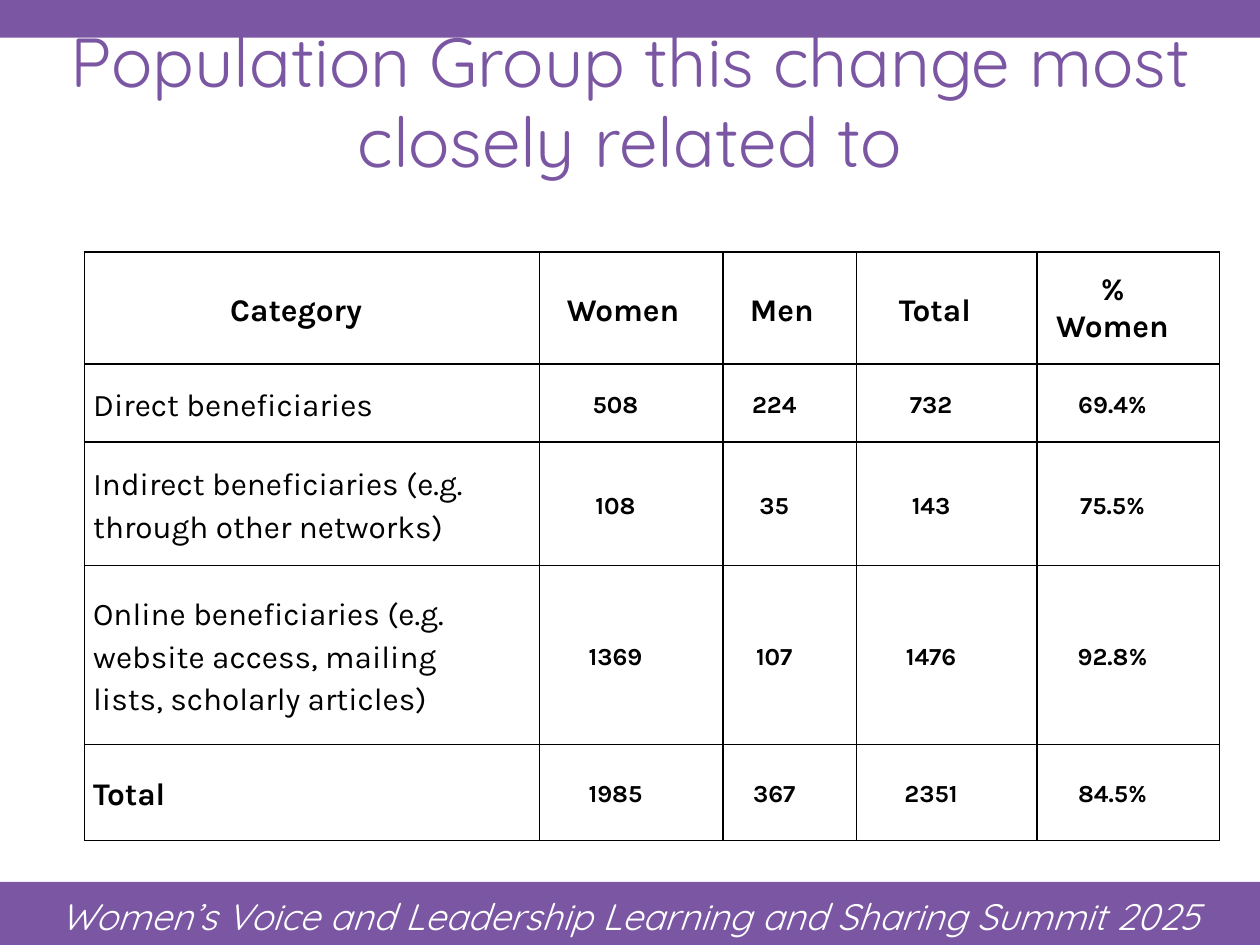
from lxml import etree
from pptx import Presentation
from pptx.dml.color import RGBColor
from pptx.enum.shapes import MSO_SHAPE
from pptx.enum.text import MSO_ANCHOR, MSO_AUTO_SIZE, PP_ALIGN
from pptx.oxml.ns import qn
from pptx.util import Inches, Pt

RECT = MSO_SHAPE.RECTANGLE
MIDDLE = MSO_ANCHOR.MIDDLE
LEFT, CENTER = PP_ALIGN.LEFT, PP_ALIGN.CENTER
NO_FIT = MSO_AUTO_SIZE.NONE

TABLE_ROWS = [
    ["Category", "Women", "Men", "Total", "%\nWomen"],
    ["Direct beneficiaries", "508", "224", "732", "69.4%"],
    ["Indirect beneficiaries (e.g. through other networks)", "108", "35", "143", "75.5%"],
    ["Online beneficiaries (e.g. website access, mailing lists, scholarly articles)",
     "1369", "107", "1476", "92.8%"],
    ["Total", "1985", "367", "2351", "84.5%"],
]
COL_WIDTHS = [3.61, 1.46, 1.06, 1.43, 1.45]
ROW_HEIGHTS = [0.89, 0.62, 0.98, 1.42, 0.76]
HEADER_RIGHT_INSETS = [0.32, 0.2, 0.2, 0.26, 0.32]
BODY_RIGHT_INSET = 0.32


def rgb(hex_color):
    return RGBColor.from_string(hex_color)


def write(tf, text, font, size, color, bold=False, italic=False, align=CENTER, spacing=1.0):
    """Fill a text frame, one paragraph for each line of text."""
    tf.word_wrap = True
    for i, line in enumerate(text.split("\n")):
        p = tf.paragraphs[0] if i == 0 else tf.add_paragraph()
        p.alignment = align
        p.line_spacing = spacing
        r = p.add_run()
        r.text = line
        r.font.name = font
        r.font.size = Pt(size)
        r.font.bold = bold
        r.font.italic = italic
        r.font.color.rgb = rgb(color)


def add_borders(cell, color, width):
    tc_pr = cell._tc.get_or_add_tcPr()
    for i, side in enumerate(("a:lnL", "a:lnR", "a:lnT", "a:lnB")):
        ln = etree.Element(qn(side), w=str(Pt(width)))
        fill = etree.SubElement(ln, qn("a:solidFill"))
        etree.SubElement(fill, qn("a:srgbClr"), val=color)
        tc_pr.insert(i, ln)


class SlideBuilder:
    purple, white, black = "7B56A3", "FFFFFF", "000000"
    heading_font, table_font = "Quicksand", "Karla"

    def __init__(self, prs):
        self.s = prs.slides.add_slide(prs.slide_layouts[5])

    def bar(self, top, height):
        sp = self.s.shapes.add_shape(RECT, 0, Inches(top), Inches(10), Inches(height))
        sp.shadow.inherit = False
        sp.fill.solid()
        sp.fill.fore_color.rgb = rgb(self.purple)
        sp.line.fill.background()

    def title(self, text, x, y, w, h):
        sp = self.s.shapes.title
        sp.left, sp.top, sp.width, sp.height = map(Inches, (x, y, w, h))
        tf = sp.text_frame
        tf.auto_size = NO_FIT
        tf.vertical_anchor = MIDDLE
        write(tf, text, self.heading_font, 39.6, self.purple, spacing=0.96)

    def footer(self, text, x, y, w, h):
        sp = self.s.shapes.add_textbox(*map(Inches, (x, y, w, h)))
        write(sp.text_frame, text, self.heading_font, 21, self.white,
              italic=True, spacing=1.07)

    def table(self, rows, x, y):
        frame = self.s.shapes.add_table(
            len(rows), len(COL_WIDTHS), Inches(x), Inches(y),
            Inches(sum(COL_WIDTHS)), Inches(sum(ROW_HEIGHTS)))
        table = frame.table
        for column, width in zip(table.columns, COL_WIDTHS):
            column.width = Inches(width)
        for row, height in zip(table.rows, ROW_HEIGHTS):
            row.height = Inches(height)
        for i, values in enumerate(rows):
            for j, text in enumerate(values):
                self.cell(table.cell(i, j), text, i, j, is_total=i == len(rows) - 1)

    def cell(self, cell, text, row, col, is_total):
        is_header, is_label = row == 0, col == 0
        cell.fill.solid()
        cell.fill.fore_color.rgb = rgb(self.white)
        cell.vertical_anchor = MIDDLE
        cell.margin_left = Inches(0.07)
        cell.margin_right = Inches(HEADER_RIGHT_INSETS[col] if is_header else BODY_RIGHT_INSET)
        cell.margin_top = cell.margin_bottom = 0
        write(cell.text_frame, text, self.table_font,
              18 if is_header or is_label else 14, self.black,
              bold=is_header or is_total or not is_label,
              align=LEFT if is_label and not is_header else CENTER,
              spacing=1.0 if "\n" in text else 1.15)
        add_borders(cell, self.black, 1)


def main():
    prs = Presentation()
    prs.slide_width, prs.slide_height = Inches(10), Inches(7.5)
    slide = SlideBuilder(prs)
    slide.bar(7, 0.5)
    slide.bar(0, 0.3)
    slide.footer("Women’s Voice and Leadership Learning and Sharing Summit 2025",
                 0.17, 7.02, 9.66, 0.48)
    slide.title("Population Group this change most closely related to", 0, 0.36, 10, 0.92)
    slide.table(TABLE_ROWS, 0.67, 2)
    prs.save("out.pptx")


if __name__ == "__main__":
    main()
